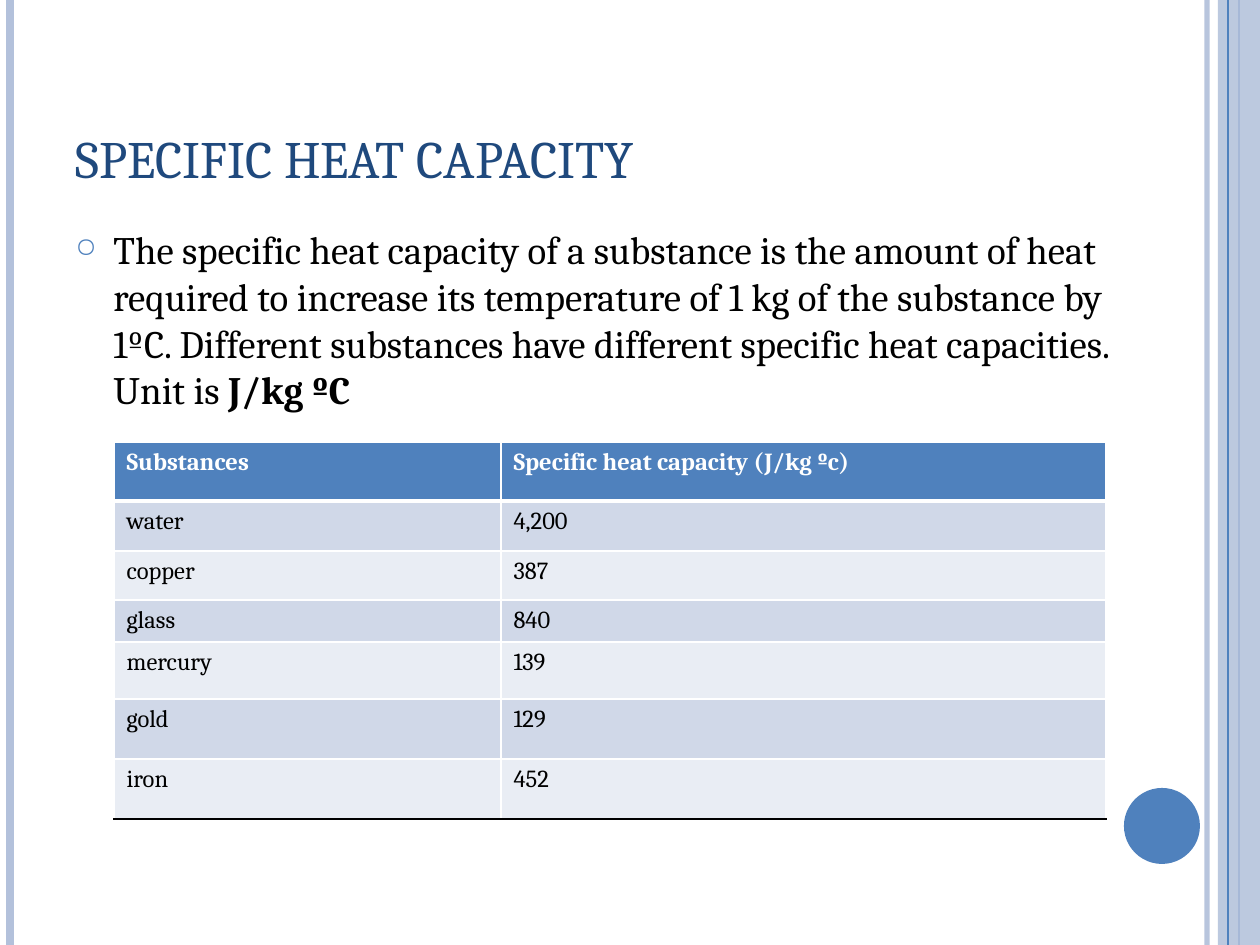
from lxml import etree
from pptx import Presentation
from pptx import util as u
from pptx.dml.color import RGBColor
from pptx.enum import shapes, text
from pptx.oxml.ns import qn

FONT = "Cambria"
BLUE, PALE, NAVY, WHITE, BLACK = "4F81BD", "B3C1DB", "1F497D", "FFFFFF", "000000"
BANDS = ("D0D8E8", "E9EDF4")
SUBSTANCES = [
    ("Substances", "Specific heat capacity (J/kg ºc)"),
    ("water", "4,200"),
    ("copper", "387"),
    ("glass", "840"),
    ("mercury", "139"),
    ("gold", "129"),
    ("iron", "452"),
]
COLUMN_WIDTHS = (387, 605)
ROW_HEIGHTS = (59, 50, 49, 41, 57, 60, 60)


def px(length):
    return u.Emu(round(length * 914400 / 126))


def paint(colour_format, colour):
    """Apply a hex colour to a fill or line fill."""
    colour_format.solid()
    colour_format.fore_color.rgb = RGBColor.from_string(colour)


def child(parent, tag, **attributes):
    return etree.SubElement(parent, qn(tag), attributes)


def set_alpha(properties, percent):
    colour = next(properties.iter(qn("a:srgbClr")))
    child(colour, "a:alpha", val=str(percent * 1000))


def write(paragraph, words, colour, **font_format):
    run = paragraph.add_run()
    run.text = words
    for name, value in {"name": FONT, **font_format}.items():
        setattr(run.font, name, value)
    run.font.color.rgb = RGBColor.from_string(colour)
    return run


def text_frame(slide, left, top, width, height, anchor):
    frame = slide.shapes.add_textbox(*map(px, (left, top, width, height))).text_frame
    frame.word_wrap = True
    frame.vertical_anchor = anchor
    return frame


def rule(slide, x, height, colour, weight, alpha=100):
    """Draw a full-height vertical line."""
    line = slide.shapes.add_connector(
        shapes.MSO_CONNECTOR.STRAIGHT, px(x), 0, px(x), px(height))
    line.line.width = u.Pt(weight)
    paint(line.line.fill, colour)
    properties = line._element.spPr
    if alpha < 100:
        set_alpha(properties, alpha)
    child(properties, "a:effectLst")


def solid(slide, kind, left, top, width, height, colour):
    shape = slide.shapes.add_shape(kind, *map(px, (left, top, width, height)))
    shape.shadow.inherit = False
    paint(shape.fill, colour)
    shape.line.fill.background()
    return shape


def margins(slide, width, height):
    """Draw the striped side edges and the corner disc."""
    rule(slide, width - 53, height, PALE, 3, 93)
    rule(slide, 10, height, PALE, 4.5)
    rule(slide, width - 21, height, BLUE, 1.5)
    band = solid(slide, shapes.MSO_SHAPE.RECTANGLE, width - 42, 0, 42, height, PALE)
    set_alpha(band._element.spPr, 87)
    rule(slide, width - 32, height, BLUE, 0.75)
    solid(slide, shapes.MSO_SHAPE.OVAL, width - 136, height - 157, 76, 76, BLUE)


def title(slide, left, top, width, height):
    frame = text_frame(slide, left, top, width, height, text.MSO_ANCHOR.BOTTOM)
    write(frame.paragraphs[0], "SPECIFIC HEAT CAPACITY", NAVY, size=u.Pt(30))


def definition(slide, left, top, width, height):
    frame = text_frame(slide, left, top, width, height, text.MSO_ANCHOR.TOP)
    paragraph = frame.paragraphs[0]
    paragraph.space_before = u.Pt(6)
    properties = paragraph._p.get_or_add_pPr()
    indent = px(38)
    properties.set("marL", str(indent))
    properties.set("indent", str(-indent))
    child(child(properties, "a:buClr"), "a:srgbClr", val=BLUE)
    child(properties, "a:buSzPct", val="70000")
    child(properties, "a:buChar", char="○")
    size = u.Pt(22.2)
    write(paragraph,
          "The specific heat capacity of a substance is the amount of heat required "
          "to increase its temperature of 1 kg of the substance by 1ºC. Different "
          "substances have different specific heat capacities. Unit is ",
          BLACK, size=size)
    write(paragraph, "J/kg ºC", BLACK, size=size, bold=True)


def cell_borders(cell, top, bottom):
    """Set the borders; top and bottom are (colour, points) pairs."""
    properties = cell._tc.get_or_add_tcPr()
    sides = {"L": (WHITE, 1), "R": (WHITE, 1), "T": top, "B": bottom}
    for position, (side, (colour, weight)) in enumerate(sides.items()):
        border = child(properties, f"a:ln{side}", w=str(u.Pt(weight)))
        child(child(border, "a:solidFill"), "a:srgbClr", val=colour)
        properties.insert(position, border)


def capacity_table(slide, left, top):
    table = slide.shapes.add_table(
        len(SUBSTANCES), len(COLUMN_WIDTHS), px(left), px(top),
        px(sum(COLUMN_WIDTHS)), px(sum(ROW_HEIGHTS))).table
    for column, width in zip(table.columns, COLUMN_WIDTHS):
        column.width = px(width)
    thin, thick = (WHITE, 1), (WHITE, 3)
    last = len(SUBSTANCES) - 1
    for r, (values, height) in enumerate(zip(SUBSTANCES, ROW_HEIGHTS)):
        table.rows[r].height = px(height)
        header = r == 0
        upper = thick if r == 1 else thin
        lower = thick if header else (BLACK, 1) if r == last else thin
        for c, value in enumerate(values):
            cell = table.cell(r, c)
            paint(cell.fill, BLUE if header else BANDS[(r - 1) % 2])
            cell_borders(cell, upper, lower)
            write(cell.text_frame.paragraphs[0], value,
                  WHITE if header else BLACK, size=u.Pt(14), bold=header)


def main():
    deck = Presentation()
    width, height = 1260, 945
    deck.slide_width, deck.slide_height = px(width), px(height)
    slide = deck.slides.add_slide(deck.slide_layouts[6])
    margins(slide, width, height)
    title(slide, 63, 38, 1092, 157)
    definition(slide, 63, 220, 1063, 213)
    capacity_table(slide, 114, 442)
    deck.save("out.pptx")


if __name__ == "__main__":
    main()
